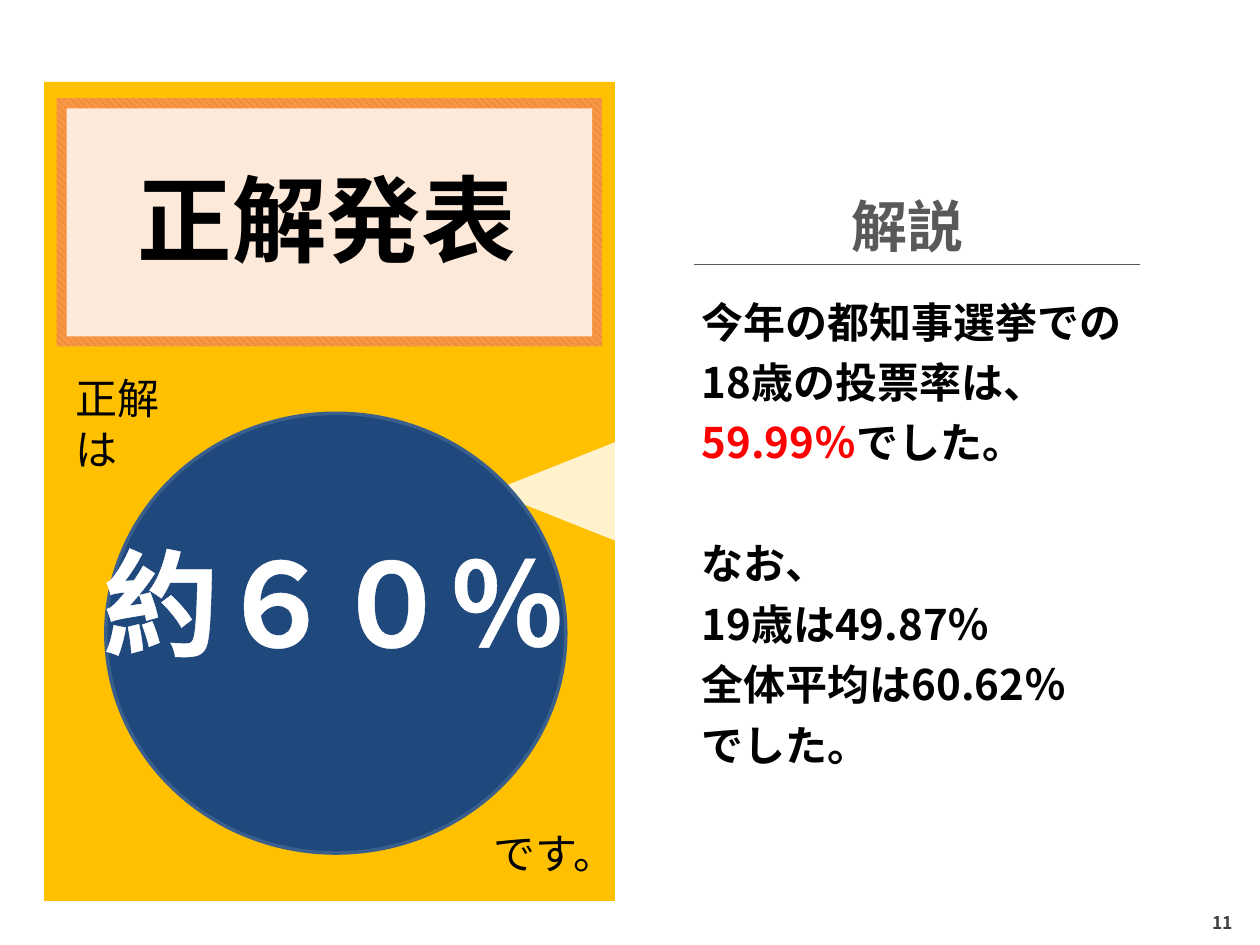
from dataclasses import dataclass

from lxml import etree
from pptx import Presentation
from pptx.dml.color import RGBColor
from pptx.enum import dml, shapes, text
from pptx.oxml.ns import qn
from pptx.util import Inches, Pt


@dataclass(frozen=True)
class Theme:
    font: str = "Noto Sans CJK JP"
    black: str = "000000"
    white: str = "FFFFFF"
    red: str = "FF0000"
    grey: str = "595959"
    dark_grey: str = "404040"
    yellow: str = "FFC000"
    orange: str = "F79646"
    dark_orange: str = "E46C0A"
    navy: str = "1F497D"
    navy_edge: str = "3A5F8C"
    answer: int = 66
    title: int = 54
    heading: int = 32
    body: int = 24
    number: int = 10


THEME = Theme()
SHAPE = shapes.MSO_SHAPE
ALIGN = text.PP_ALIGN


def rgb(value):
    return RGBColor.from_string(value)


def place(item, left, top, width, height):
    item.left, item.top = Inches(left), Inches(top)
    item.width, item.height = Inches(width), Inches(height)


def add_block(page, kind, box, color, opacity=100):
    block = page.shapes.add_shape(kind, *map(Inches, box))
    block.shadow.inherit = False
    block.fill.solid()
    block.fill.fore_color.rgb = rgb(color)
    block.line.fill.background()
    if opacity < 100:
        tint = block.fill._xPr.find(qn("a:solidFill"))[0]
        etree.SubElement(tint, qn("a:alpha"), val=str(opacity * 1000))
    return block


def add_span(para, words, size, color, bold=False):
    span = para.add_run()
    span.text = words
    span.font.name = THEME.font
    span.font.size = Pt(size)
    span.font.bold = bold
    span.font.color.rgb = rgb(color)
    etree.SubElement(span.font._element, qn("a:ea"), typeface=THEME.font)
    return span


def add_label(page, box, words, size, color, bold=False, align=ALIGN.LEFT, wrap=False):
    label = page.shapes.add_textbox(*map(Inches, box))
    label.text_frame.word_wrap = wrap
    para = label.text_frame.paragraphs[0]
    para.alignment = align
    return add_span(para, words, size, color, bold)


def outline_span(span, color, width):
    edge = etree.Element(qn("a:ln"), w=str(Pt(width)))
    fill = etree.SubElement(edge, qn("a:solidFill"))
    etree.SubElement(fill, qn("a:srgbClr"), val=color)
    span.font._element.insert(0, edge)


def add_title(page, left, top, width, height):
    frame = add_block(page, SHAPE.RECTANGLE, (left, top, width, height), THEME.orange)
    frame.fill.patterned()
    frame.fill.pattern = dml.MSO_PATTERN.WIDE_DOWNWARD_DIAGONAL
    frame.fill.fore_color.rgb = rgb(THEME.dark_orange)
    frame.fill.back_color.rgb = rgb(THEME.orange)
    rim = 0.08
    add_block(page, SHAPE.RECTANGLE,
              (left + rim, top + rim, width - 2 * rim, height - 2 * rim), THEME.white, 80)

    title = page.shapes.title
    place(title, left + 0.53, top + 0.45, 3.23, 1.01)
    title.element.getparent().append(title.element)  # in front of its frame
    title.text_frame.word_wrap = False
    title.text_frame.auto_size = text.MSO_AUTO_SIZE.NONE
    title.text_frame.vertical_anchor = text.MSO_ANCHOR.TOP
    para = title.text_frame.paragraphs[0]
    para.alignment = ALIGN.CENTER
    add_span(para, "正解発表", THEME.title, THEME.black, True)


def add_answer_panel(page, left, top, width, height):
    add_block(page, SHAPE.RECTANGLE, (left, top, width, height), THEME.yellow)
    pointer = add_block(page, SHAPE.ISOSCELES_TRIANGLE,
                        (left + 3.68, top + 2.61, 1.02, 1.28), THEME.white, 80)
    pointer.rotation = 270
    add_title(page, left + 0.1, top + 0.13, width - 0.2, 1.97)
    add_label(page, (left + 0.15, top + 2.26, 1.16, 0.5), "正解は",
              THEME.body, THEME.black, wrap=True)
    add_label(page, (left + 3.47, top + 5.87, 1.2, 0.5), "です。", THEME.body, THEME.black)

    disc = add_block(page, SHAPE.OVAL, (left + 0.49, top + 2.63, 3.65, 3.49), THEME.navy)
    disc.line.color.rgb = rgb(THEME.navy_edge)
    disc.line.width = Pt(2)
    answer = add_label(page, (left + 0.15, top + 3.52, 4.3, 1.21), "約６０％",
                       THEME.answer, THEME.white, True, ALIGN.CENTER, True)
    outline_span(answer, THEME.white, 1.5)


def add_explanation(page, left, top, width, height):
    add_label(page, (left + 1.18, top, 1.1, 0.64), "解説",
              THEME.heading, THEME.grey, True, ALIGN.CENTER)
    rule_y = Inches(top + 0.63)
    rule = page.shapes.add_connector(shapes.MSO_CONNECTOR.STRAIGHT, Inches(left + 0.04),
                                     rule_y, Inches(left + 3.58), rule_y)
    rule.line.color.rgb = rgb(THEME.grey)
    rule.line.width = Pt(0.75)
    etree.SubElement(rule.line._get_or_add_ln().getparent(), qn("a:effectLst"))

    body = page.shapes.add_textbox(Inches(left), Inches(top + 0.75),
                                   Inches(width), Inches(height - 0.75))
    body.text_frame.word_wrap = True
    paragraphs = [
        [("今年の都知事選挙での18歳の投票率は、", THEME.black),
         ("59.99％", THEME.red), ("でした。", THEME.black)],
        [("なお、", THEME.black)],
        [("19歳は49.87％", THEME.black)],
        [("全体平均は60.62％", THEME.black)],
        [("でした。", THEME.black)],
    ]
    for index, spans in enumerate(paragraphs):
        para = body.text_frame.add_paragraph() if index else body.text_frame.paragraphs[0]
        para.line_spacing = 1.2
        if index == 1:
            para.space_before = Pt(34.5)
        for words, color in spans:
            add_span(para, words, THEME.body, color, True)


def add_page_number(page, left, top, width, height):
    corner = add_block(page, SHAPE.RECTANGLE, (left, top, width, height), THEME.white)
    frame = corner.text_frame
    frame.word_wrap = False
    frame.vertical_anchor = text.MSO_ANCHOR.MIDDLE
    frame.margin_left = frame.margin_right = Inches(0.04)
    frame.margin_top = frame.margin_bottom = Inches(0.04)
    frame.paragraphs[0].alignment = ALIGN.CENTER
    add_span(frame.paragraphs[0], "11", THEME.number, THEME.dark_grey, True)


def main():
    deck = Presentation()
    deck.slide_width, deck.slide_height = Inches(10), Inches(7.5)
    page = deck.slides.add_slide(deck.slide_layouts.get_by_name("Title Only"))
    add_answer_panel(page, 0.35, 0.65, 4.53, 6.5)
    add_explanation(page, 5.47, 1.47, 3.65, 5.64)
    add_page_number(page, 9.41, 7.15, 0.59, 0.35)
    deck.save("out.pptx")


if __name__ == "__main__":
    main()
